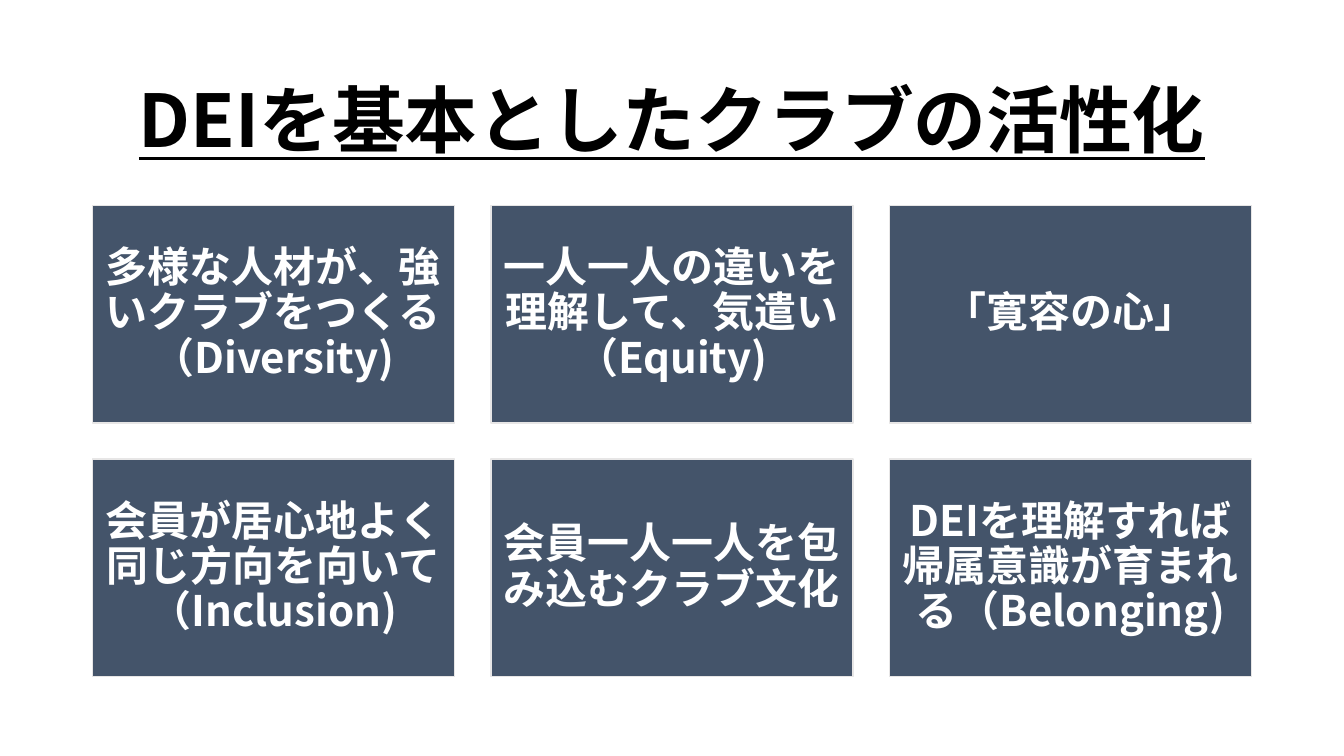
from dataclasses import dataclass

from lxml.etree import SubElement
from pptx import Presentation
from pptx.dml.color import RGBColor
from pptx.enum.shapes import MSO_SHAPE
from pptx.enum.text import MSO_ANCHOR, PP_ALIGN
from pptx.oxml.ns import qn
from pptx.util import Pt


@dataclass(frozen=True)
class Theme:
    font: str = "Noto Sans CJK JP"
    title_color: str = "000000"
    card_text: str = "FFFFFF"
    card_fill: str = "44546A"
    card_line: str = "E7E6E6"
    title_size: float = 52
    card_size: float = 30


THEME = Theme()
TITLE = "DEIを基本としたクラブの活性化"
CARDS = [
    "多様な人材が、強いクラブをつくる（Diversity)",
    "一人一人の違いを理解して、気遣い（Equity)",
    "「寛容の心」",
    "会員が居心地よく同じ方向を向いて（Inclusion)",
    "会員一人一人を包み込むクラブ文化",
    "DEIを理解すれば帰属意識が育まれる（Belonging)",
]
COLUMNS = 3
LEFT, CARDS_TOP = 66, 146.8
CARD_WIDTH, CARD_HEIGHT, GAP = 258.75, 155.25, 25.88


def write_text(shape, text, *, size, color, space_after, insets, underline=False):
    frame = shape.text_frame
    frame.word_wrap = True
    frame.vertical_anchor = MSO_ANCHOR.MIDDLE
    horizontal, vertical = insets
    frame.margin_left = frame.margin_right = Pt(horizontal)
    frame.margin_top = frame.margin_bottom = Pt(vertical)
    paragraph = frame.paragraphs[0]
    paragraph.alignment = PP_ALIGN.CENTER
    paragraph.line_spacing = 0.9
    paragraph.space_after = Pt(space_after)
    run = paragraph.add_run()
    run.text = text
    run.font.size = Pt(size)
    run.font.bold = True
    if underline:
        run.font.underline = True
    run.font.color.rgb = RGBColor.from_string(color)
    run.font.name = THEME.font
    SubElement(run.font._element, qn("a:ea"), typeface=THEME.font)


def add_title(slide, text):
    box = slide.shapes.add_textbox(Pt(LEFT), Pt(44), Pt(828), Pt(89.2))
    write_text(box, text, size=THEME.title_size, color=THEME.title_color,
               space_after=6, insets=(7.2, 3.6), underline=True)


def add_card(slide, text, left, top):
    card = slide.shapes.add_shape(
        MSO_SHAPE.RECTANGLE, Pt(left), Pt(top), Pt(CARD_WIDTH), Pt(CARD_HEIGHT))
    card.shadow.inherit = False
    card.fill.solid()
    card.fill.fore_color.rgb = RGBColor.from_string(THEME.card_fill)
    card.line.color.rgb = RGBColor.from_string(THEME.card_line)
    card.line.width = Pt(1)
    write_text(card, text, size=THEME.card_size, color=THEME.card_text,
               space_after=10.5, insets=(8.6, 8.6))


def main():
    presentation = Presentation()
    presentation.slide_width = Pt(960)
    presentation.slide_height = Pt(540)
    slide = presentation.slides.add_slide(presentation.slide_layouts[6])
    add_title(slide, TITLE)
    for index, text in enumerate(CARDS):
        row, column = divmod(index, COLUMNS)
        add_card(slide, text, LEFT + column * (CARD_WIDTH + GAP),
                 CARDS_TOP + row * (CARD_HEIGHT + GAP))
    presentation.save("out.pptx")


if __name__ == "__main__":
    main()
